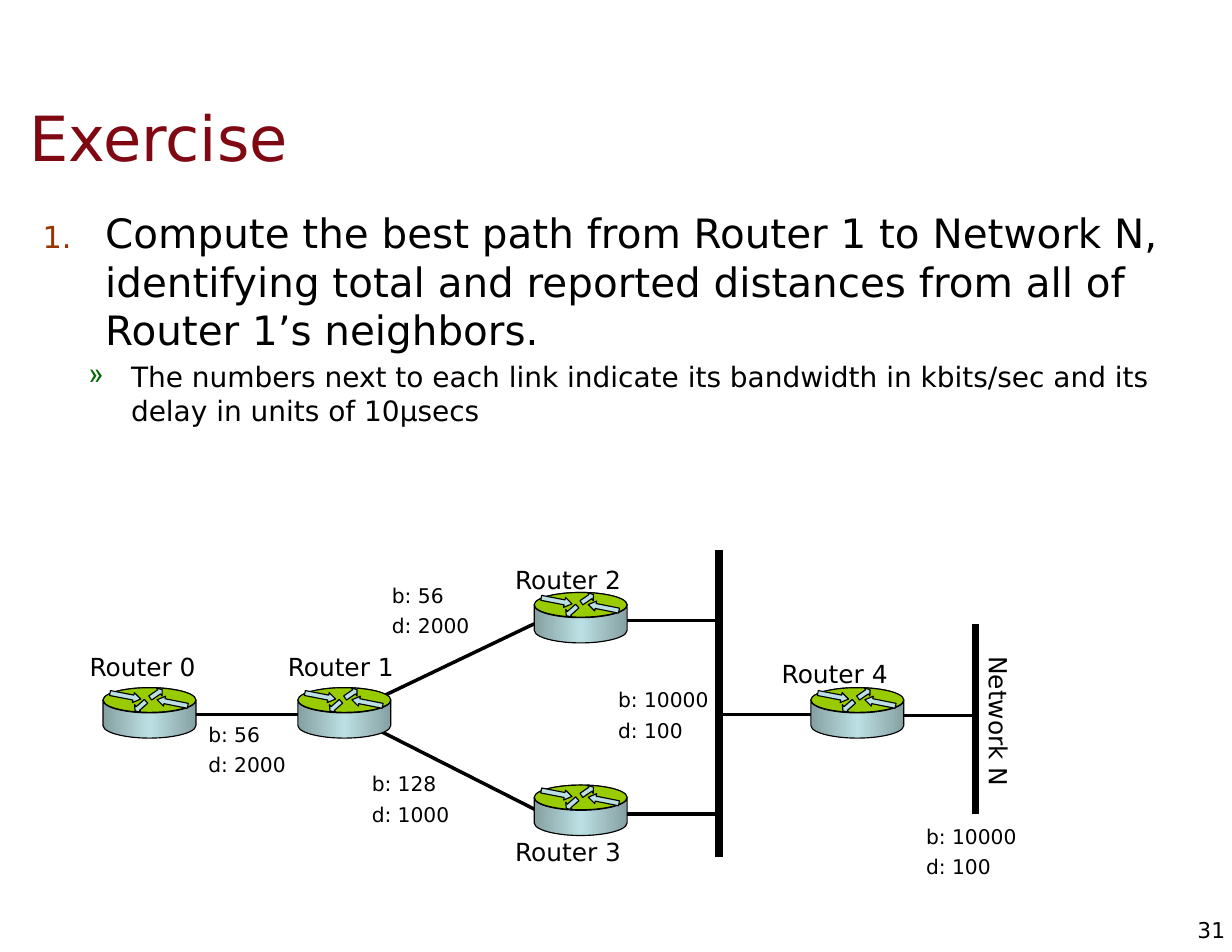
from copy import deepcopy

from lxml import etree
from pptx import Presentation
from pptx import util as u
from pptx.dml.color import RGBColor
from pptx.enum import shapes, text
from pptx.oxml.ns import qn

COLORS = {
    "ink": "000000", "title": "7F0813", "number": "993300", "quote": "006600",
    "top": "99CC00", "arrow": "BBE0E3", "side": "86A0A2",
}
FONT = "DejaVu Sans"

TITLE = "Exercise"
TASK = [
    {"text": "Compute the best path from Router 1 to Network N, identifying total "
             "and reported distances from all of Router 1’s neighbors.",
     "size": 26, "margin": 0.56, "indent": -0.56, "before": 0,
     "bullet": [("buClr", "number"), ("buSzPct", {"val": "75000"}),
                ("buAutoNum", {"type": "arabicPeriod"})]},
    {"text": "The numbers next to each link indicate its bandwidth in kbits/sec "
             "and its delay in units of 10μsecs",
     "size": 18, "margin": 0.79, "indent": -0.38, "before": 4,
     "bullet": [("buClr", "quote"), ("buChar", {"char": "»"})]},
]
LINKS = [
    (2.75, 6.38, 1.65, 6.38), (3.39, 6.23, 4.77, 5.57), (3.38, 6.52, 4.86, 7.27),
    (5.5, 5.54, 6.42, 5.54), (5.5, 7.27, 6.42, 7.27),
    (6.42, 6.38, 7.33, 6.38), (7.79, 6.39, 8.71, 6.39),
]
NETWORKS = [(6.42, 4.91, 6.42, 7.65), (8.71, 5.57, 8.71, 7.27)]
ROUTERS = [
    ("Router 0", (0.92, 6.14), (0.69, 5.76)),
    ("Router 1", (2.66, 6.14), (2.46, 5.76)),
    ("Router 2", (4.77, 5.29), (4.49, 4.98)),
    ("Router 3", (4.77, 7.01), (4.49, 7.41)),
    ("Router 4", (7.24, 6.14), (6.87, 5.82)),
]
COSTS = [
    (56, 2000, 1.75, 6.43), (56, 2000, 3.39, 5.19), (128, 1000, 3.21, 6.87),
    (10000, 100, 5.41, 6.12), (10000, 100, 8.16, 7.34),
]
ROUTER_ARROWS = [
    (0.48, 0.09, 0.28, 11.2, 0.75, True),
    (0.06, 0.03, 0.28, 11, 0.75, False),
    (0.41, 0.01, 0.13, 325.5, 0.36, False),
    (0.27, 0.12, 0.13, 138.8, 0.36, False),
]


def rgb(name):
    return RGBColor.from_string(COLORS[name])


def apply(target, values):
    for name, value in values.items():
        setattr(target, name, value)


def add_text(page, place, lines, size, color="ink", spacing=None, **frame_format):
    box = page.shapes.add_textbox(*map(u.Inches, place))
    frame = box.text_frame
    apply(frame, {"word_wrap": True, "margin_left": u.Inches(0.11),
                  "margin_right": u.Inches(0.11), "margin_top": u.Inches(0.06),
                  "margin_bottom": u.Inches(0.06), **frame_format})
    for index, line in enumerate(lines):
        para = frame.paragraphs[0] if index == 0 else frame.add_paragraph()
        apply(para, {"line_spacing": spacing, "space_before": u.Pt(7 if index else 0)})
        span = para.add_run()
        span.text = line
        apply(span.font, {"name": FONT, "size": u.Pt(size)})
        span.font.color.rgb = rgb(color)
    return frame


def add_bullet(para, item):
    properties = para._p.get_or_add_pPr()
    properties.set("marL", str(u.Inches(item["margin"])))
    properties.set("indent", str(u.Inches(item["indent"])))
    for tag, value in item["bullet"]:
        if tag == "buClr":
            color = etree.SubElement(properties, qn("a:buClr"))
            etree.SubElement(color, qn("a:srgbClr"), val=COLORS[value])
        else:
            etree.SubElement(properties, qn("a:" + tag), **value)


def add_line(page, ends, width):
    line = page.shapes.add_connector(shapes.MSO_CONNECTOR.STRAIGHT, *map(u.Inches, ends))
    line.line.width = u.Pt(width)
    line.line.color.rgb = rgb("ink")
    etree.SubElement(line._element.spPr, qn("a:effectLst"))


def add_part(group, kind, place, color):
    part = group.shapes.add_shape(kind, *map(u.Inches, place))
    part.shadow.inherit = False
    part.fill.solid()
    part.fill.fore_color.rgb = rgb(color)
    part.line.color.rgb = rgb("ink")
    part.line.width = u.Pt(0.75)
    return part


def shade(part):
    part.fill.gradient()
    part.fill.gradient_angle = 0
    stops = part._element.spPr.find(".//" + qn("a:gsLst"))
    stops.append(deepcopy(stops[0]))
    for stop, position, color in zip(part.fill.gradient_stops, (0, 0.5, 1),
                                     ("side", "arrow", "side")):
        stop.position = position
        stop.color.rgb = rgb(color)


def add_router(page, left, top):
    kinds = shapes.MSO_SHAPE
    group = page.shapes.add_group_shape()
    body = add_part(group, kinds.CAN, (left, top, 0.83, 0.45), "side")
    body.adjustments[0] = 0.5
    shade(body)
    add_part(group, kinds.OVAL, (left, top, 0.83, 0.22), "top")
    for dx, dy, width, angle, head, flipped in ROUTER_ARROWS:
        arrow = add_part(group, kinds.RIGHT_ARROW,
                         (left + dx, top + dy, width, 0.09), "arrow")
        arrow.rotation = angle
        arrow.adjustments[0] = 0.5
        arrow.adjustments[1] = head
        if flipped:
            arrow._element.spPr.xfrm.set("flipH", "1")


def main():
    deck = Presentation()
    apply(deck, {"slide_width": u.Inches(11), "slide_height": u.Inches(8.5)})
    page = deck.slides.add_slide(deck.slide_layouts[6])

    middle = text.MSO_ANCHOR.MIDDLE
    add_text(page, (0.15, 0.7, 10.53, 1.04), [TITLE], 40, "title", vertical_anchor=middle)
    task = add_text(page, (0.27, 1.8, 10.37, 2), [item["text"] for item in TASK], 26)
    for level, (para, item) in enumerate(zip(task.paragraphs, TASK)):
        add_bullet(para, item)
        apply(para, {"level": level, "space_before": u.Pt(item["before"])})
        para.runs[0].font.size = u.Pt(item["size"])

    for ends in LINKS:
        add_line(page, ends, 2.25)
    for ends in NETWORKS:
        add_line(page, ends, 4.5)
    for name, corner, label in ROUTERS:
        add_router(page, *corner)
        add_text(page, (*label, 1.26, 0.38), [name], 16)
    for bandwidth, delay, left, top in COSTS:
        add_text(page, (left, top, 1.1, 0.59),
                 [f"b: {bandwidth}", f"d: {delay}"], 13, spacing=0.8)

    network = add_text(page, (8.67, 5.8, 0.49, 1.42), ["Network N"], 16)
    network._txBody.bodyPr.set("vert", "eaVert")
    number = add_text(page, (10.6, 8.18, 0.34, 0.24), ["31"], 14, vertical_anchor=middle,
                      word_wrap=False, margin_left=0, margin_right=0,
                      margin_top=0, margin_bottom=0)
    number.paragraphs[0].alignment = text.PP_ALIGN.RIGHT
    deck.save("out.pptx")


if __name__ == "__main__":
    main()
